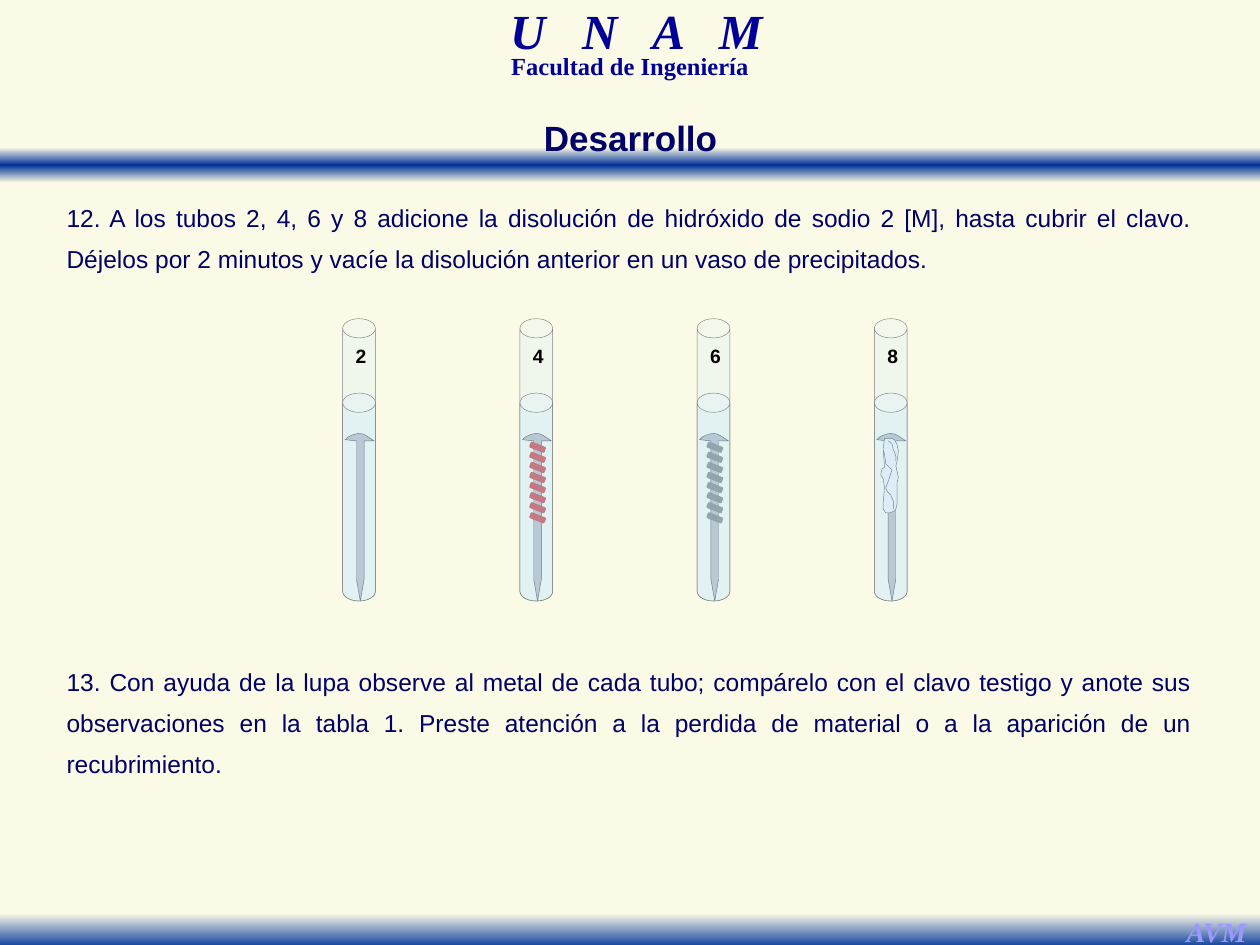
from lxml import etree
from pptx import Presentation
from pptx import util as u
from pptx.dml import color
from pptx.enum import shapes, text
from pptx.oxml import ns

CREAM, BLUE, NAVY, TITLE_BLUE = "FAFAE6", "003399", "000066", "000099"
TIMES, ARIAL = "Times New Roman", "Arial"
NAIL = [(0.11, 0.97), (0.02, 0.96), (0.04, 0.94), (0.07, 0.925), (0.10, 0.915),
        (0.13, 0.91), (0.16, 0.915), (0.19, 0.93), (0.22, 0.95), (0.25, 0.97),
        (0.17, 0.97), (0.17, 2.07), (0.14, 2.24), (0.11, 2.07)]
COATING = [(0.16, 1.52), (0.15, 1.53), (0.12, 1.54), (0.09, 1.54), (0.07, 1.51),
           (0.07, 1.46), (0.08, 1.34), (0.07, 1.27), (0.05, 1.24), (0.06, 1.19),
           (0.08, 1.18), (0.07, 1.03), (0.08, 0.95), (0.14, 0.95), (0.16, 0.96),
           (0.18, 1.00), (0.19, 1.05), (0.18, 1.13), (0.17, 1.17), (0.18, 1.21),
           (0.19, 1.26), (0.18, 1.30), (0.18, 1.47), (0.17, 1.51)]
CREASES = [
    [(0.11, 0.97), (0.14, 0.99), (0.15, 1.04), (0.16, 1.06), (0.17, 1.09), (0.17, 1.13)],
    [(0.07, 1.05), (0.08, 1.07), (0.09, 1.15), (0.12, 1.18), (0.14, 1.20), (0.12, 1.26),
     (0.11, 1.29), (0.09, 1.34), (0.10, 1.37), (0.13, 1.40), (0.15, 1.45), (0.15, 1.51)]]


def rgb(value):
    """Turn a hex string into a colour."""
    return color.RGBColor.from_string(value)


def apply(target, values):
    """Set each attribute of the target from a dict."""
    for name, value in values.items():
        setattr(target, name, value)


def paint(shape, fill=None, line=None, width=0.25, opacity=None):
    """Give a shape its fill, opacity and outline, without shadow."""
    shape.shadow.inherit = False
    if fill:
        shape.fill.solid()
        shape.fill.fore_color.rgb = rgb(fill)
    else:
        shape.fill.background()
    if opacity:
        tint = shape._element.spPr.find(ns.qn("a:solidFill"))[0]
        etree.SubElement(tint, ns.qn("a:alpha"), val=str(opacity * 1000))
    if line:
        shape.line.color.rgb = rgb(line)
        shape.line.width = u.Pt(width)
    else:
        shape.line.fill.background()


def add_preset(parent, kind, left, top, width, height):
    """Add a preset shape at a place in inches."""
    return parent.shapes.add_shape(kind, *map(u.Inches, (left, top, width, height)))


def add_band(page, top, colours):
    """Add a full-width band with an even vertical gradient."""
    band = add_preset(page, shapes.MSO_SHAPE.RECTANGLE, 0, top, 10, 0.28)
    paint(band)
    band.fill.gradient()
    band.fill.gradient_angle = 270
    stops = band._element.spPr.find(ns.qn("a:gradFill")).find(ns.qn("a:gsLst"))
    for stop in list(stops):
        stops.remove(stop)
    for index, value in enumerate(colours):
        position = 100000 * index // (len(colours) - 1)
        stop = etree.SubElement(stops, ns.qn("a:gs"), pos=str(position))
        etree.SubElement(stop, ns.qn("a:srgbClr"), val=value)


def write(frame, words, size, font, colour, align="CENTER", spacing=1.0, **style):
    """Write one formatted paragraph and return it."""
    para = frame.paragraphs[0]
    apply(para, {"alignment": getattr(text.PP_ALIGN, align), "line_spacing": spacing})
    span = para.add_run()
    span.text = words
    apply(span.font, {"size": u.Pt(size), "name": font, **style})
    span.font.color.rgb = rgb(colour)
    return para


def add_text(page, place, *words, wrap=True, **style):
    """Add a text box that grows with its text."""
    box = page.shapes.add_textbox(*map(u.Inches, place))
    apply(box.text_frame, {"word_wrap": wrap,
                           "auto_size": text.MSO_AUTO_SIZE.SHAPE_TO_FIT_TEXT})
    return write(box.text_frame, *words, **style)


def add_step(page, top, height, words):
    """Add a justified step with a hanging number."""
    para = add_text(page, (0.43, top, 9.13, height), words, 14, ARIAL, NAVY,
                    align="JUSTIFY", spacing=1.4)
    apply(para._p.get_or_add_pPr(), {"marL": u.Inches(0.29), "indent": u.Inches(-0.29)})


def add_outline(group, left, top, points, closed=True, **look):
    """Draw a path through points given from the tube's corner."""
    corners = [(u.Inches(left + x), u.Inches(top + y)) for x, y in points]
    builder = group.shapes.build_freeform(*corners[0])
    builder.add_line_segments(corners[1:], close=closed)
    paint(builder.convert_to_shape(), **look)


def add_coil(group, left, top, colour):
    """Wind eight slanted turns of wire around the nail."""
    for turn in range(8):
        wire = add_preset(group, shapes.MSO_SHAPE.ROUNDED_RECTANGLE,
                          left + 0.08, top + 1 + 0.08 * turn, 0.12, 0.04)
        wire.rotation = 21.8
        paint(wire, colour, colour, 0.75)


def add_glass(group, left, top, height, opacity):
    """Add a clear cylinder."""
    glass = add_preset(group, shapes.MSO_SHAPE.CAN, left, top, 0.26, height)
    glass.adjustments[0] = 0.587
    paint(glass, "CCECFF", "808080", opacity=opacity)
    return glass


def add_tube(page, left, label, wire=None, coated=False):
    """Add a numbered test tube with a nail in liquid."""
    top = 2.53
    group = page.shapes.add_group_shape()
    add_outline(group, left, top, NAIL, fill="A6A6A6", line="000000")
    if wire:
        add_coil(group, left, top, wire)
    if coated:
        add_outline(group, left, top, COATING, fill="F0F0F0", line="0D0D0D")
        for crease in CREASES:
            add_outline(group, left, top, crease, closed=False, line="0D0D0D")
    frame = add_glass(group, left, top, 2.24, 23).text_frame
    apply(frame, {"vertical_anchor": text.MSO_ANCHOR.TOP, "margin_left": u.Inches(0.03),
                  "margin_right": 0, "margin_top": u.Inches(0.05)})
    write(frame, label, 11, ARIAL, "000000", bold=True)
    add_glass(group, left, top + 0.59, 1.65, 37)


def main():
    """Build the slide and save it."""
    deck = Presentation()
    apply(deck, {"slide_width": u.Inches(10), "slide_height": u.Inches(7.5)})
    page = deck.slides.add_slide(deck.slide_layouts[6])
    page.background.fill.solid()
    page.background.fill.fore_color.rgb = rgb(CREAM)

    add_band(page, 1.17, [CREAM, BLUE, CREAM])
    school = add_text(page, (3.09, 0.08, 3.92, 0.43), "U N A M", 28, TIMES, TITLE_BLUE,
                      spacing=0.7, bold=True, italic=True)
    school.runs[0]._r.get_or_add_rPr().set("spc", "700")
    add_text(page, (3.21, 0.42, 3.58, 0.26), "Facultad de Ingeniería", 14, TIMES,
             TITLE_BLUE, spacing=0.7, bold=True)
    add_band(page, 7.25, [CREAM, BLUE])
    add_text(page, (9.31, 7.21, 0.69, 0.37), "AVM", 16, TIMES, "9999FF", wrap=False,
             bold=True, italic=True)
    add_text(page, (4.21, 0.74, 1.59, 0.52), "Desarrollo", 20, ARIAL, NAVY, wrap=False,
             spacing=1.4, bold=True)

    add_step(page, 1.47, 0.76,
             "12. A los tubos 2, 4, 6 y 8 adicione la disolución de hidróxido de sodio "
             "2 [M], hasta cubrir el clavo. Déjelos por 2 minutos y vacíe la disolución "
             "anterior en un vaso de precipitados.")
    add_step(page, 5.15, 1.05,
             "13. Con ayuda de la lupa observe al metal de cada tubo; compárelo con el "
             "clavo testigo y anote sus observaciones en la tabla 1. Preste atención a la "
             "perdida de material o a la aparición de un recubrimiento.")

    tubes = [{"label": "2"}, {"label": "4", "wire": "C00000"},
             {"label": "6", "wire": "595959"}, {"label": "8", "coated": True}]
    for index, tube in enumerate(tubes):
        add_tube(page, 2.72 + index * 4.22 / 3, **tube)
    deck.save("out.pptx")


if __name__ == "__main__":
    main()
